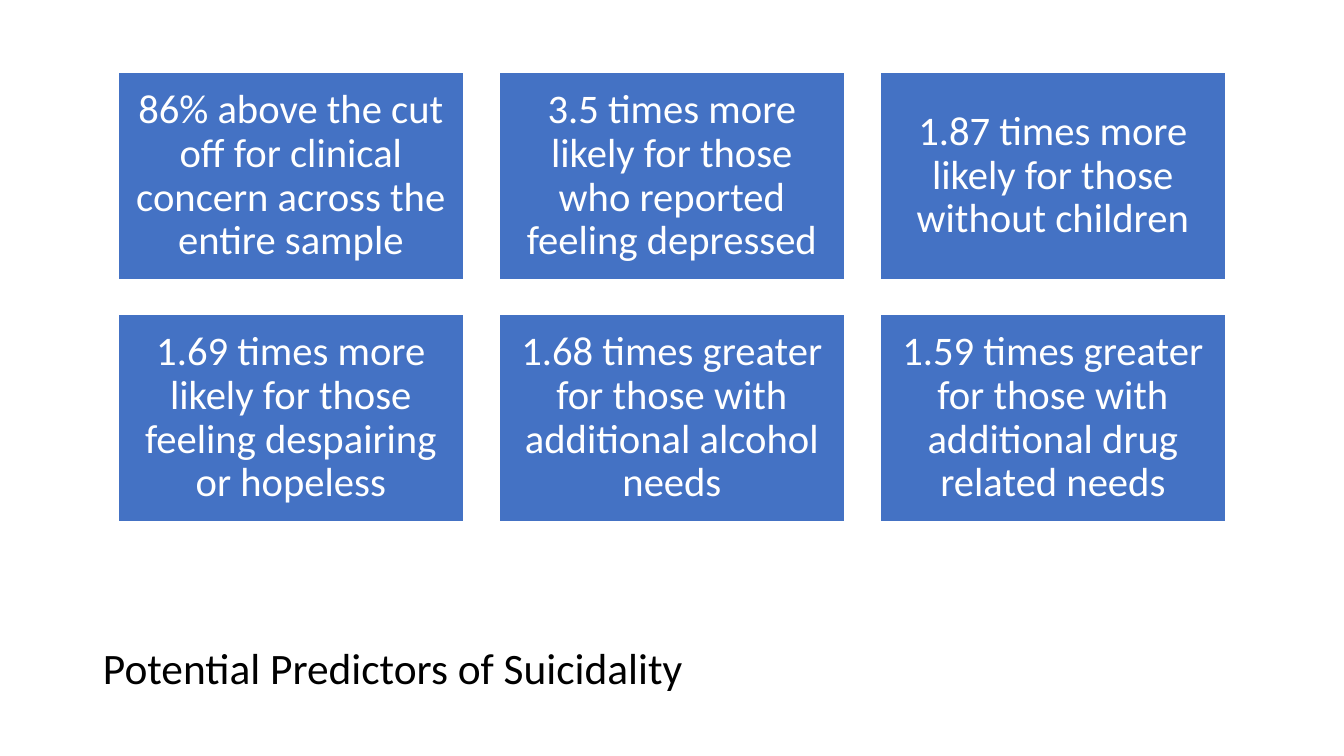
from pptx import Presentation
from pptx.dml.color import RGBColor
from pptx.enum.shapes import MSO_SHAPE as Shape
from pptx.enum.text import MSO_ANCHOR as Anchor, PP_ALIGN as Align
from pptx.util import Emu, Pt

EMU_PER_PX = 914400 / 100.8
COLUMNS = 3
CARD_LEFT, CARD_TOP = 118, 72
CARD_WIDTH, CARD_HEIGHT = 346, 208
COLUMN_GAP, ROW_GAP = 35, 34
PREDICTORS = [
    "86% above the cut off for clinical concern across the entire sample",
    "3.5 times more likely for those who reported feeling depressed",
    "1.87 times more likely for those without children",
    "1.69 times more likely for those feeling despairing or hopeless",
    "1.68 times greater for those with additional alcohol needs",
    "1.59 times greater for those with additional drug related needs",
]


def px(length):
    return Emu(round(length * EMU_PER_PX))


def color(hex_code):
    return RGBColor.from_string(hex_code)


def set_all(target, values):
    for name, value in values.items():
        setattr(target, name, value)


def write(box, text, size, hex_code, align, inset_x, inset_y):
    """Put one vertically centred paragraph into a shape."""
    frame = box.text_frame
    set_all(frame, {
        "word_wrap": True, "vertical_anchor": Anchor.MIDDLE,
        "margin_left": px(inset_x), "margin_right": px(inset_x),
        "margin_top": px(inset_y), "margin_bottom": px(inset_y),
    })
    para = frame.paragraphs[0]
    set_all(para, {"alignment": align, "line_spacing": 0.9})
    span = para.add_run()
    span.text = text
    set_all(span.font, {"name": "Calibri", "size": Pt(size)})
    span.font.color.rgb = color(hex_code)


def add_card(page, left, top, text):
    card = page.shapes.add_shape(Shape.RECTANGLE, px(left), px(top),
                                 px(CARD_WIDTH), px(CARD_HEIGHT))
    card.shadow.inherit = False
    card.fill.solid()
    card.fill.fore_color.rgb = color("4472C4")
    card.line.color.rgb = color("FFFFFF")
    card.line.width = Pt(1)
    write(card, text, 29, "FFFFFF", Align.CENTER, 12, 12)


def add_title(page, text):
    title = page.shapes.add_textbox(px(93), px(610), px(890), px(121))
    write(title, text, 31, "000000", Align.LEFT, 10, 5)


def main():
    deck = Presentation()
    set_all(deck, {"slide_width": px(1344), "slide_height": px(756)})
    page = deck.slides.add_slide(deck.slide_layouts[6])
    add_title(page, "Potential Predictors of Suicidality")
    for index, text in enumerate(PREDICTORS):
        row, column = divmod(index, COLUMNS)
        add_card(page, CARD_LEFT + column * (CARD_WIDTH + COLUMN_GAP),
                 CARD_TOP + row * (CARD_HEIGHT + ROW_GAP), text)
    deck.save("out.pptx")


if __name__ == "__main__":
    main()
